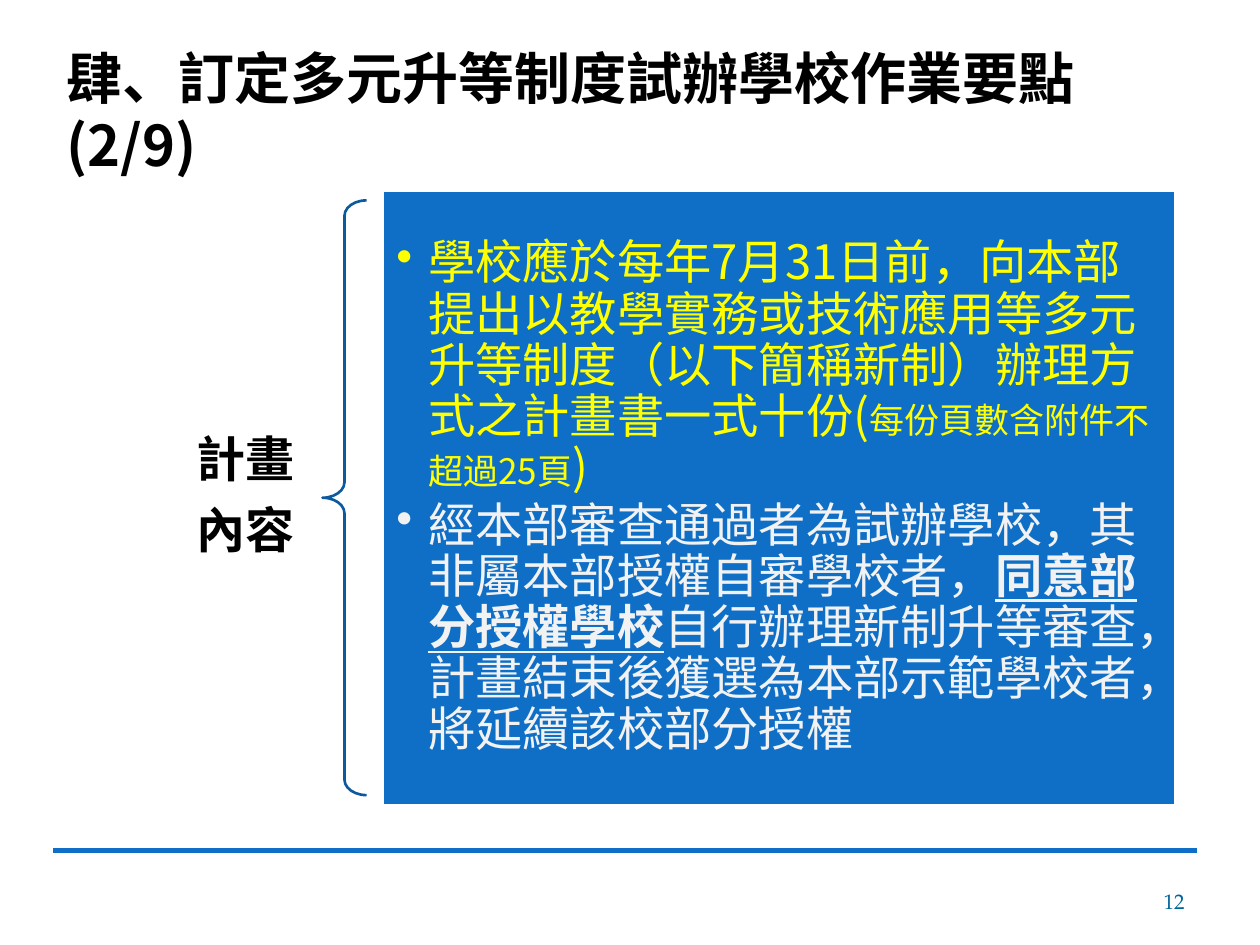
from dataclasses import dataclass

from lxml.etree import SubElement
from pptx import Presentation
from pptx.dml.color import RGBColor
from pptx.enum.shapes import MSO_CONNECTOR as Connector, MSO_SHAPE as Shape
from pptx.enum.text import MSO_ANCHOR as Anchor, PP_ALIGN as Align
from pptx.oxml.ns import qn
from pptx.util import Cm, Pt


@dataclass(frozen=True)
class Theme:
    heading_font: str = "Noto Sans CJK SC"
    number_font: str = "TeX Gyre Pagella"
    black: str = "000000"
    blue: str = "0F6FC6"
    brace: str = "0C599F"
    yellow: str = "FFFF00"
    pale: str = "F2F2F2"
    white: str = "FFFFFF"
    number: str = "006699"
    title_size: float = 32
    label_size: float = 28
    body_size: float = 27
    note_size: float = 20
    number_size: float = 12


@dataclass(frozen=True)
class Frame:
    left: float
    top: float
    width: float
    height: float

    def lengths(self) -> tuple:
        return tuple(Cm(n) for n in (self.left, self.top, self.width, self.height))


@dataclass(frozen=True)
class Span:
    text: str
    size: float | None = None
    strong: bool = False


@dataclass(frozen=True)
class Style:
    size: float
    color: str
    font: str
    bold: bool = False
    align: Align = Align.LEFT
    line_spacing: float = 1.0
    space_after: float = 0
    bullet: bool = False


THEME = Theme()
BULLET_INDENT = Cm(0.64)


def add_bullet(para) -> None:
    properties = para._p.get_or_add_pPr()
    properties.set("marL", str(BULLET_INDENT))
    properties.set("indent", str(-BULLET_INDENT))
    SubElement(properties, qn("a:buChar")).set("char", "•")


def write_para(para, spans: list[Span], style: Style) -> None:
    para.alignment = style.align
    para.line_spacing = style.line_spacing
    para.space_after = Pt(style.space_after)
    if style.bullet:
        add_bullet(para)
    font = para.font
    font.name = style.font
    font.size = Pt(style.size)
    font.bold = style.bold
    font.color.rgb = RGBColor.from_string(style.color)
    SubElement(font._element, qn("a:ea")).set("typeface", style.font)
    for span in spans:
        run = para.add_run()
        run.text = span.text
        if span.size:
            run.font.size = Pt(span.size)
        if span.strong:
            run.font.bold = run.font.underline = True


def fill_text(box, paras: list[tuple[list[Span], Style]], anchor: Anchor,
              side: float = 0.25, edge: float = 0.13) -> None:
    """Write paragraphs with side and top/bottom insets in centimetres."""
    frame = box.text_frame
    frame.word_wrap = True
    frame.vertical_anchor = anchor
    frame.margin_left = frame.margin_right = Cm(side)
    frame.margin_top = frame.margin_bottom = Cm(edge)
    for index, (spans, style) in enumerate(paras):
        para = frame.add_paragraph() if index else frame.paragraphs[0]
        write_para(para, spans, style)


def add_text(page, frame: Frame, lines: list[str], style: Style,
             anchor: Anchor = Anchor.MIDDLE, side: float = 0.25, edge: float = 0.13) -> None:
    box = page.shapes.add_textbox(*frame.lengths())
    fill_text(box, [([Span(line)], style) for line in lines], anchor, side, edge)


def set_line(shape, color: str, width: float) -> None:
    shape.line.color.rgb = RGBColor.from_string(color)
    shape.line.width = Pt(width)


def add_footer_rule(page) -> None:
    rule = page.shapes.add_connector(
        Connector.STRAIGHT, Cm(1.07), Cm(17.15), Cm(24.13), Cm(17.15))
    set_line(rule, THEME.blue, 3)
    SubElement(rule._element.spPr, qn("a:effectLst"))


def add_brace(page, frame: Frame) -> None:
    brace = page.shapes.add_shape(Shape.LEFT_BRACE, *frame.lengths())
    brace.shadow.inherit = False
    brace.adjustments[0] = 0.35
    brace.fill.background()
    set_line(brace, THEME.brace, 1.5)


def add_panel(page, frame: Frame, paras: list[tuple[list[Span], Style]]) -> None:
    panel = page.shapes.add_shape(Shape.RECTANGLE, *frame.lengths())
    panel.shadow.inherit = False
    panel.fill.solid()
    panel.fill.fore_color.rgb = RGBColor.from_string(THEME.blue)
    set_line(panel, THEME.white, 1.5)
    fill_text(panel, paras, Anchor.MIDDLE, side=0.27, edge=0.27)


def body_style(color: str) -> Style:
    return Style(THEME.body_size, color, THEME.heading_font,
                 line_spacing=0.9, space_after=4, bullet=True)


def main() -> None:
    deck = Presentation()
    deck.slide_width, deck.slide_height = Cm(25.4), Cm(19.05)
    page = deck.slides.add_slide(deck.slide_layouts[6])

    add_footer_rule(page)
    add_text(page, Frame(1.09, 0.74, 23.39, 1.63),
             ["肆、訂定多元升等制度試辦學校作業要點(2/9)"],
             Style(THEME.title_size, THEME.black, THEME.heading_font, bold=True),
             anchor=Anchor.TOP)
    add_text(page, Frame(2.11, 8.23, 4.39, 3.58), ["計畫", "內容"],
             Style(THEME.label_size, THEME.black, THEME.heading_font, bold=True,
                   align=Align.RIGHT, line_spacing=0.9, space_after=10),
             side=0.56, edge=0.2)
    add_brace(page, Frame(6.5, 4.04, 0.89, 11.99))

    proposal = [
        Span("學校應於每年7月31日前，向本部提出以教學實務或技術應用等多元升等制度"
             "（以下簡稱新制）辦理方式之計畫書一式十份("),
        Span("每份頁數含附件不超過25頁", size=THEME.note_size),
        Span(")"),
    ]
    authorization = [
        Span("經本部審查通過者為試辦學校，其非屬本部授權自審學校者，"),
        Span("同意部分授權學校", strong=True),
        Span("自行辦理新制升等審查，計畫結束後獲選為本部示範學校者，將延續該校部分授權"),
    ]
    add_panel(page, Frame(7.72, 3.84, 15.98, 12.4),
              [(proposal, body_style(THEME.yellow)),
               (authorization, body_style(THEME.pale))])

    add_text(page, Frame(18.21, 17.65, 5.92, 1.02), ["12"],
             Style(THEME.number_size, THEME.number, THEME.number_font, align=Align.RIGHT))
    deck.save("out.pptx")


if __name__ == "__main__":
    main()
